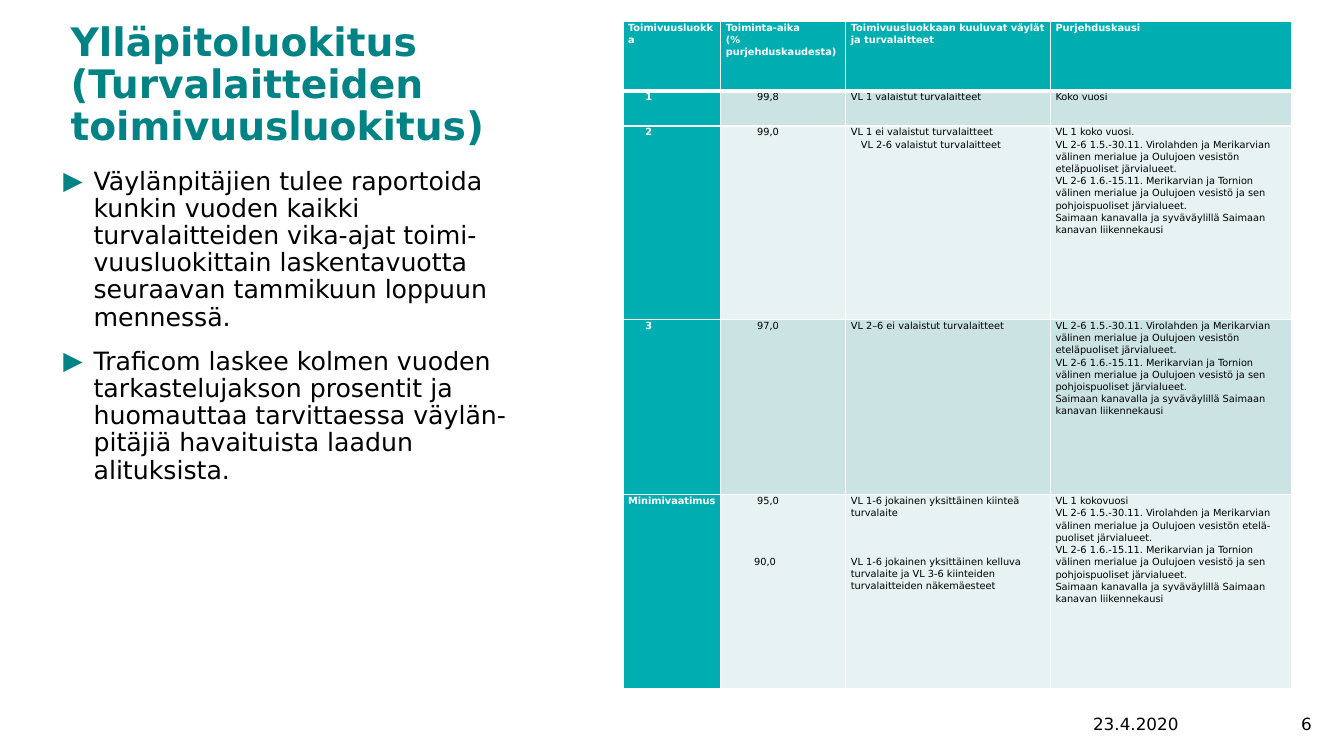
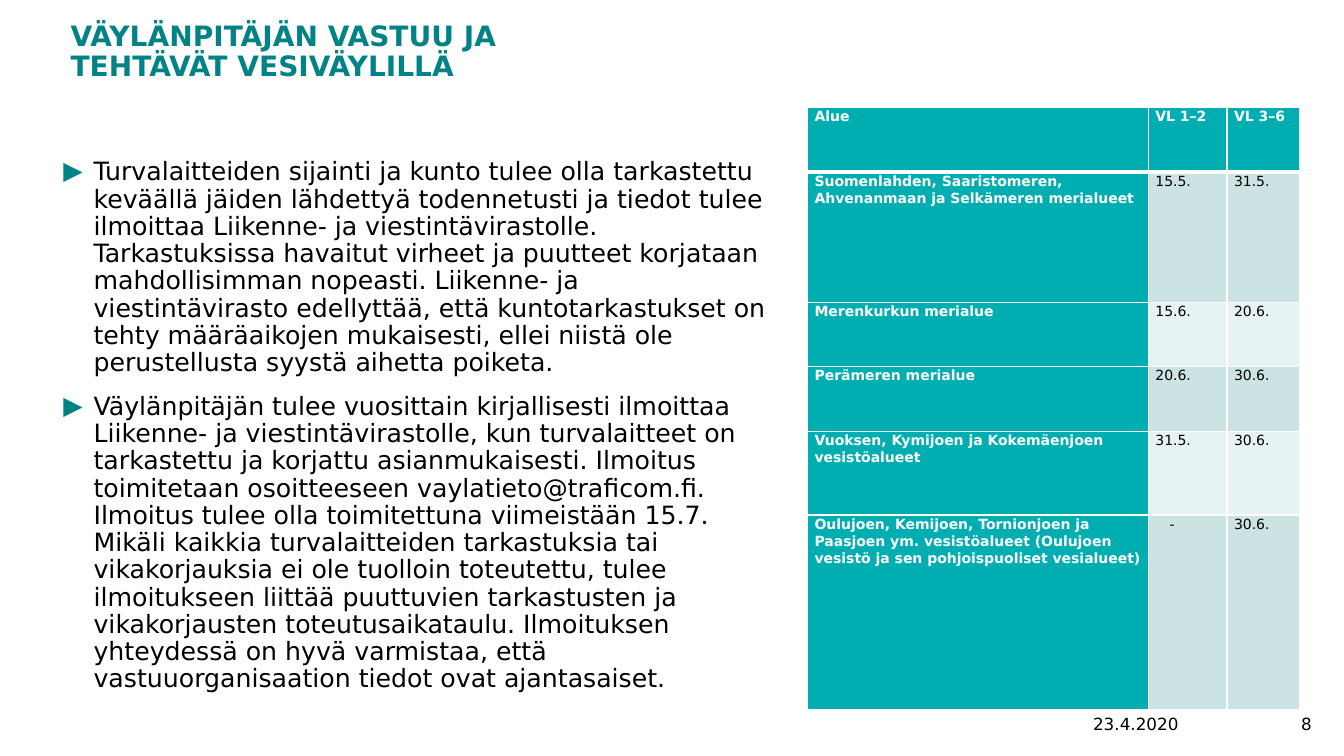
from collections import namedtuple

from lxml.etree import SubElement
from pptx import Presentation
from pptx.dml.color import RGBColor
from pptx.enum.text import MSO_ANCHOR, PP_ALIGN
from pptx.oxml.ns import qn
from pptx.util import Inches, Pt

FONT = "DejaVu Sans"
TITLE_COLOR = "018285"
HEADER_FILL = "00AEB2"
BAND_FILLS = ("CCE3E4", "E7F2F2")
WHITE = "FFFFFF"
BLACK = "000000"
DATE = "23.4.2020"

Line = namedtuple("Line", "text indent before", defaults=(0, 0))

SOUTH = ("VL 2-6 1.5.-30.11. Virolahden ja Merikarvian välinen merialue ja "
         "Oulujoen vesistön eteläpuoliset järvialueet.")
NORTH = ("VL 2-6 1.6.-15.11. Merikarvian ja Tornion välinen merialue ja "
         "Oulujoen vesistö ja sen pohjoispuoliset järvialueet.")
SAIMAA = "Saimaan kanavalla ja syväväylillä Saimaan kanavan liikennekausi"

CLASS_ROWS = [
    ["Toimivuusluokka", ["Toiminta-aika", "(% purjehduskaudesta)"],
     "Toimivuusluokkaan kuuluvat väylät ja turvalaitteet", "Purjehduskausi"],
    [Line("1", 0.17), Line("99,8", 0.31), "VL 1 valaistut turvalaitteet",
     "Koko vuosi"],
    [Line("2", 0.17), Line("99,0", 0.31),
     ["VL 1 ei valaistut turvalaitteet",
      Line("VL 2-6 valaistut turvalaitteet", 0.1)],
     ["VL 1 koko vuosi.", SOUTH, NORTH, SAIMAA]],
    [Line("3", 0.17), Line("97,0", 0.31), "VL 2–6 ei valaistut turvalaitteet",
     [SOUTH, NORTH, SAIMAA]],
    ["Minimivaatimus", [Line("95,0", 0.31), Line("90,0", 0.28, 35)],
     ["VL 1-6 jokainen yksittäinen kiinteä turvalaite",
      Line("VL 1-6 jokainen yksittäinen kelluva turvalaite ja VL 3-6 "
           "kiinteiden turvalaitteiden näkemäesteet", 0, 26)],
     ["VL 1 kokovuosi", SOUTH.replace("eteläpuoliset", "etelä-puoliset"),
      NORTH, SAIMAA]],
]

DEADLINE_ROWS = [
    ["Alue", "VL 1–2", "VL 3–6"],
    ["Suomenlahden, Saaristomeren, Ahvenanmaan ja Selkämeren merialueet",
     "15.5.", "31.5."],
    ["Merenkurkun merialue", "15.6.", "20.6."],
    ["Perämeren merialue", "20.6.", "30.6."],
    ["Vuoksen, Kymijoen ja Kokemäenjoen vesistöalueet", "31.5.", "30.6."],
    ["Oulujoen, Kemijoen, Tornionjoen ja Paasjoen ym. vesistöalueet "
     "(Oulujoen vesistö ja sen pohjoispuoliset vesialueet)",
     Line("-", 0.14), "30.6."],
]

REPORTING = [
    "Väylänpitäjien tulee raportoida kunkin vuoden kaikki turvalaitteiden "
    "vika-ajat toimi-vuusluokittain laskentavuotta seuraavan tammikuun "
    "loppuun mennessä.",
    "Traficom laskee kolmen vuoden tarkastelujakson prosentit ja huomauttaa "
    "tarvittaessa väylän-pitäjiä havaituista laadun alituksista.",
]

DUTIES = [
    "Turvalaitteiden sijainti ja kunto tulee olla tarkastettu keväällä jäiden "
    "lähdettyä todennetusti ja tiedot tulee ilmoittaa Liikenne- ja "
    "viestintävirastolle. Tarkastuksissa havaitut virheet ja puutteet "
    "korjataan mahdollisimman nopeasti. Liikenne- ja viestintävirasto "
    "edellyttää, että kuntotarkastukset on tehty määräaikojen mukaisesti, "
    "ellei niistä ole perustellusta syystä aihetta poiketa.",
    "Väylänpitäjän tulee vuosittain kirjallisesti ilmoittaa Liikenne- ja "
    "viestintävirastolle, kun turvalaitteet on tarkastettu ja korjattu "
    "asianmukaisesti. Ilmoitus toimitetaan osoitteeseen "
    "vaylatieto@traficom.fi. Ilmoitus tulee olla toimitettuna viimeistään "
    "15.7. Mikäli kaikkia turvalaitteiden tarkastuksia tai vikakorjauksia ei "
    "ole tuolloin toteutettu, tulee ilmoitukseen liittää puuttuvien "
    "tarkastusten ja vikakorjausten toteutusaikataulu. Ilmoituksen yhteydessä "
    "on hyvä varmistaa, että vastuuorganisaation tiedot ovat ajantasaiset.",
]


def rgb(color):
    return RGBColor.from_string(color)


def style(p, size, color, bold=False, spacing=None):
    if spacing:
        p.line_spacing = spacing
    for r in p.runs:
        r.font.name = FONT
        r.font.size = Pt(size)
        r.font.bold = bold
        r.font.color.rgb = rgb(color)


def set_indent(p, left, first=0):
    pPr = p._p.get_or_add_pPr()
    pPr.set("marL", str(Inches(left)))
    pPr.set("indent", str(Inches(first)))
    return pPr


def add_bullet(p):
    pPr = set_indent(p, 0.3, -0.3)
    fill = SubElement(pPr, qn("a:buClr"))
    SubElement(fill, qn("a:srgbClr"), val=TITLE_COLOR)
    SubElement(pPr, qn("a:buFont"), typeface=FONT)
    SubElement(pPr, qn("a:buChar"), char="▶")


def add_textbox(s, box, text):
    tf = s.shapes.add_textbox(*map(Inches, box)).text_frame
    tf.word_wrap = True
    tf.text = text
    return tf


def set_title(s, text, size):
    title = s.shapes.title
    title.left, title.top, title.width, title.height = map(
        Inches, (0.6, 0.17, 6.07, 1.21))
    tf = title.text_frame
    tf.text = text
    tf.vertical_anchor = MSO_ANCHOR.TOP
    p = tf.paragraphs[0]
    p.alignment = PP_ALIGN.LEFT
    style(p, size, TITLE_COLOR, True, 0.9)


def add_bullets(s, box, items):
    tf = add_textbox(s, box, "\n".join(items))
    for i, p in enumerate(tf.paragraphs):
        add_bullet(p)
        p.space_before = Pt(12 if i else 0)
        style(p, 18, BLACK, spacing=0.9)


def add_footer(s, number):
    for left, width, text, align in (
            (10.24, 2.05, DATE, PP_ALIGN.CENTER),
            (12.36, 0.75, number, PP_ALIGN.RIGHT)):
        tf = add_textbox(s, (left, 7.04, width, 0.28), text)
        tf.vertical_anchor = MSO_ANCHOR.MIDDLE
        tf.paragraphs[0].alignment = align
        style(tf.paragraphs[0], 12, BLACK)


def set_borders(cell, bottom):
    tcPr = cell._tc.get_or_add_tcPr()
    for side, width in (("L", 1), ("R", 1), ("T", 1), ("B", bottom)):
        ln = SubElement(tcPr, qn(f"a:ln{side}"), w=str(Pt(width)))
        fill = SubElement(ln, qn("a:solidFill"))
        SubElement(fill, qn("a:srgbClr"), val=WHITE)


def fill_cell(cell, content, size, margin, row, col):
    items = content if type(content) is list else [content]
    lines = [Line(item) if isinstance(item, str) else item for item in items]
    heading = row == 0 or col == 0
    set_borders(cell, 1 if row else 3)
    cell.fill.solid()
    cell.fill.fore_color.rgb = rgb(
        HEADER_FILL if heading else BAND_FILLS[(row - 1) % 2])
    cell.margin_left = cell.margin_right = Inches(margin)
    cell.margin_top = cell.margin_bottom = 0
    cell.text_frame.text = "\n".join(line.text for line in lines)
    for p, line in zip(cell.text_frame.paragraphs, lines):
        if line.indent:
            set_indent(p, line.indent)
        if line.before:
            p.space_before = Pt(line.before)
        style(p, size, WHITE if heading else BLACK, heading, 1.07)


def add_grid(s, left, top, widths, heights, rows, size, margin):
    box = map(Inches, (left, top, sum(widths), sum(heights)))
    table = s.shapes.add_table(len(heights), len(widths), *box).table
    table.first_col = True
    table.horz_banding = False
    for column, width in zip(table.columns, widths):
        column.width = Inches(width)
    for i, (height, row) in enumerate(zip(heights, rows)):
        table.rows[i].height = Inches(height)
        for j, content in enumerate(row):
            fill_cell(table.cell(i, j), content, size, margin, i, j)


def add_slide(prs, title, title_size, number):
    s = prs.slides.add_slide(prs.slide_layouts[5])
    set_title(s, title, title_size)
    add_footer(s, number)
    return s


def main():
    prs = Presentation()
    prs.slide_width = Inches(13.33)
    prs.slide_height = Inches(7.5)

    s = add_slide(prs, "Ylläpitoluokitus (Turvalaitteiden toimivuusluokitus)",
                  28, "6")
    add_bullets(s, (0.53, 1.62, 4.72, 5.41), REPORTING)
    add_grid(s, 6.18, 0.21, (0.97, 1.24, 2.03, 2.39),
             (0.69, 0.35, 1.92, 1.74, 1.92), CLASS_ROWS, 7, 0.05)

    s = add_slide(prs, "VÄYLÄNPITÄJÄN VASTUU JA TEHTÄVÄT VESIVÄYLILLÄ",
                  20, "8")
    add_bullets(s, (0.53, 1.53, 7.25, 5.6), DUTIES)
    add_grid(s, 8.01, 1.07, (3.38, 0.78, 0.72),
             (0.64, 1.29, 0.64, 0.64, 0.83, 1.93), DEADLINE_ROWS, 10, 0.07)

    prs.save("out.pptx")


if __name__ == "__main__":
    main()
